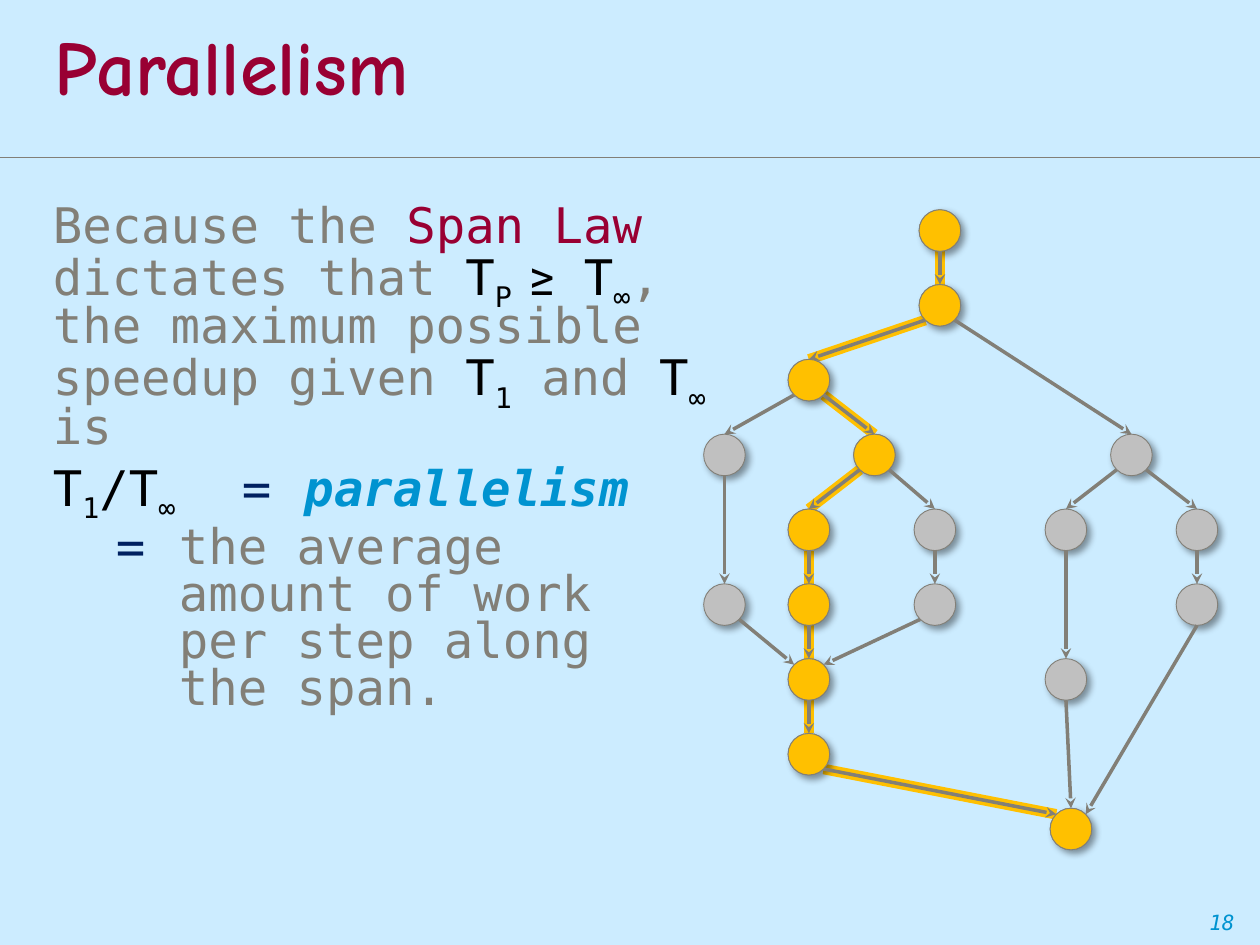
from lxml import etree
from pptx import Presentation
from pptx.dml.color import RGBColor
from pptx.enum.shapes import MSO_CONNECTOR, MSO_SHAPE
from pptx.enum.text import MSO_ANCHOR, MSO_AUTO_SIZE, PP_ALIGN
from pptx.oxml.ns import qn
from pptx.util import Inches, Pt

STRAIGHT = MSO_CONNECTOR.STRAIGHT
OVAL = MSO_SHAPE.OVAL
MIDDLE, TOP, BOTTOM = MSO_ANCHOR.MIDDLE, MSO_ANCHOR.TOP, MSO_ANCHOR.BOTTOM
LEFT = PP_ALIGN.LEFT
NO_AUTOFIT = MSO_AUTO_SIZE.NONE

SLIDE_W, SLIDE_H = Inches(10), Inches(7.5)
CELL = SLIDE_W / 10
MONO, HAND, SYMBOL = "DejaVu Sans Mono", "Comic Neue", "Roboto"
SKY, GREY, MAROON, BLACK = "CCECFF", "827F77", "990033", "000000"
NAVY, BLUE, GOLD, SILVER = "002060", "0093D0", "FFC000", "C0C0C0"

NODE = 0.33
FIRST_ROW, LAST_ROW, ROW_STEPS = 1.83, 6.58, 8
ROW_PITCH = (LAST_ROW - FIRST_ROW) / ROW_STEPS
COLUMNS = {"a": 5.75, "b": 6.42, "c": 6.94, "d": 7.42, "e": 7.46,
           "f": 8.46, "g": 8.5, "h": 8.98, "i": 9.5}
SITES = {"n": (0, -1), "s": (0, 1), "nw": (-0.71, -0.71), "ne": (0.71, -0.71),
         "sw": (-0.71, 0.71), "se": (0.71, 0.71)}

SPAN_NODES = ["e0", "e1", "b2", "c3", "b4", "b5", "b6", "b7", "g8"]
SPAN_SITES = ["s n", "sw n", "se n", "sw n", "s n", "s n", "s n", "se nw"]
SPAN_EDGES = [(start, end, *sites.split()) for start, end, sites
              in zip(SPAN_NODES, SPAN_NODES[1:], SPAN_SITES)]
OTHER_NODES = ["a3", "a5", "d4", "d5", "h3", "f4", "f6", "i4", "i5"]
OTHER_EDGES = [
    ("e1", "h3", "se", "n"), ("b2", "a3", "sw", "n"), ("a3", "a5", "s", "n"),
    ("c3", "d4", "se", "n"), ("a5", "b6", "se", "nw"), ("h3", "i4", "se", "n"),
    ("d5", "b6", "sw", "ne"), ("d4", "d5", "s", "n"), ("h3", "f4", "sw", "n"),
    ("f4", "f6", "s", "n"), ("i4", "i5", "s", "n"), ("i5", "g8", "s", "ne"),
    ("f6", "g8", "s", "n"),
]

T, INFINITY = ("T", BLACK), ("∞", BLACK, "sub")
ONE = ("1", BLACK, "sub")
STATEMENT = [
    ("Because the ", GREY), ("Span Law ", MAROON), ("dictates that", GREY),
    (" T", BLACK), ("P ", BLACK, "sub"), ("≥", BLACK, "symbol"),
    (" T", BLACK), INFINITY, (", the maximum possible speedup given ", GREY),
    T, ONE, (" and ", GREY), T, INFINITY, (" is", GREY),
]
DEFINITION = [T, ONE, ("/T", BLACK), ("∞ \t", BLACK, "sub"), ("=\t", NAVY),
              ("parallelism", BLUE, "strong")]
MEANING = [("\t=\t", NAVY),
           ("the average \n\t\tamount of work \n\t\tper step along \n\t\tthe span.", GREY)]


def cells(*lengths):
    return [round(length * CELL) for length in lengths]


def rgb(colour):
    return RGBColor.from_string(colour)


def set_font(font, name, size, colour=None):
    font.name, font.size = name, Pt(size)
    if colour:
        font.color.rgb = rgb(colour)


def set_tabs(paragraph, stops):
    properties = paragraph._p.get_or_add_pPr()
    tabs = etree.Element(qn("a:tabLst"))
    for stop in stops:
        etree.SubElement(tabs, qn("a:tab"), pos=str(cells(stop)[0]), algn="l")
    defaults = properties.find(qn("a:defRPr"))
    if defaults is None:
        properties.append(tabs)
    else:
        defaults.addprevious(tabs)


def place(shape, left, top, width, height, anchor):
    shape.left, shape.top, shape.width, shape.height = cells(left, top, width, height)
    shape.text_frame.vertical_anchor = anchor
    shape.text_frame.auto_size = NO_AUTOFIT
    shape.text_frame.word_wrap = True


def add_styled_text(paragraph, text, colour, style=None):
    for index, line in enumerate(text.split("\n")):
        if index:
            paragraph.add_line_break()
        run = paragraph.add_run()
        run.text = line
        run.font.color.rgb = rgb(colour)
        if style == "sub":
            run._r.get_or_add_rPr().set("baseline", "-25000")
        elif style == "symbol":
            run.font.name = SYMBOL
        elif style == "strong":
            run.font.bold = run.font.italic = True


def fill_title(title):
    place(title, 0.33, 0.07, 9.67, 1, MIDDLE)
    heading = title.text_frame.paragraphs[0]
    heading.text = "Parallelism"
    heading.alignment = LEFT
    heading.line_spacing = 0.86
    set_font(heading.font, HAND, 44, MAROON)
    heading.font.bold = True


def fill_body(body):
    place(body, 0.32, 1.58, 5.93, 4.19, TOP)
    frame = body.text_frame
    for index, pieces in enumerate([STATEMENT, DEFINITION, MEANING]):
        paragraph = frame.add_paragraph() if index else frame.paragraphs[0]
        paragraph.line_spacing = 0.8
        paragraph.space_before = Pt(5.6)
        set_font(paragraph.font, MONO, 28)
        properties = paragraph._p.get_or_add_pPr()
        properties.set("marL", "0")
        properties.set("indent", "0")
        bullet = etree.Element(qn("a:buNone"))
        properties.find(qn("a:defRPr")).addprevious(bullet)
        set_tabs(paragraph, [0.5, 1, 1.5, 2])
        for piece in pieces:
            add_styled_text(paragraph, *piece)


def add_page_number(shapes):
    footer = shapes.add_textbox(0, 0, 0, 0)
    place(footer, 0, 7.17, 10, 0.3, BOTTOM)
    number = footer.text_frame.paragraphs[0]
    number.text = "\t18"
    set_font(number.font, MONO, 12, BLUE)
    number.font.italic = True
    set_tabs(number, [9.5])


def add_line(shapes, start, end, colour, width, arrow=False):
    line = shapes.add_connector(STRAIGHT, *cells(*start, *end))
    line.line.color.rgb = rgb(colour)
    line.line.width = Pt(width)
    if arrow:
        etree.SubElement(line.line._get_or_add_ln(), qn("a:tailEnd"), type="stealth")
    etree.SubElement(line._element.spPr, qn("a:effectLst"))


def node_centre(node):
    return COLUMNS[node[0]], FIRST_ROW + int(node[1]) * ROW_PITCH


def node_site(node, site):
    return [centre + offset * NODE / 2
            for centre, offset in zip(node_centre(node), SITES[site])]


def add_edge(shapes, edge, colour, width, arrow=False):
    start, end, start_site, end_site = edge
    add_line(shapes, node_site(start, start_site), node_site(end, end_site),
             colour, width, arrow)


def add_node(shapes, node, colour, shaded=False):
    x, y = node_centre(node)
    circle = shapes.add_shape(OVAL, *cells(x - NODE / 2, y - NODE / 2, NODE, NODE))
    circle.fill.solid()
    circle.fill.fore_color.rgb = rgb(colour)
    circle.line.color.rgb = rgb(GREY)
    circle.line.width = Pt(0.5)
    circle.shadow.inherit = False
    if shaded:
        effects = circle._element.spPr.find(qn("a:effectLst"))
        shadow = etree.SubElement(effects, qn("a:outerShdw"), blurRad=str(Pt(4)),
                                  dist=str(Pt(3)), dir=str(45 * 60000))
        tint = etree.SubElement(shadow, qn("a:srgbClr"), val=BLACK)
        etree.SubElement(tint, qn("a:alpha"), val="40000")


def add_graph(shapes):
    for edge in SPAN_EDGES:
        add_edge(shapes, edge, GOLD, 6)
    for node in SPAN_NODES + OTHER_NODES:
        add_node(shapes, node, SILVER, shaded=True)
    for edge in SPAN_EDGES + OTHER_EDGES:
        add_edge(shapes, edge, GREY, 2, arrow=True)
    for node in SPAN_NODES:
        add_node(shapes, node, GOLD)


def main():
    deck = Presentation()
    deck.slide_width, deck.slide_height = SLIDE_W, SLIDE_H
    slide = deck.slides.add_slide(deck.slide_layouts[1])
    slide.background.fill.solid()
    slide.background.fill.fore_color.rgb = rgb(SKY)
    fill_title(slide.shapes.title)
    fill_body(slide.placeholders[1])
    add_page_number(slide.shapes)
    add_line(slide.shapes, (0, 1.25), (10, 1.25), GREY, 0.75)
    add_graph(slide.shapes.add_group_shape().shapes)
    deck.save("out.pptx")


if __name__ == "__main__":
    main()
